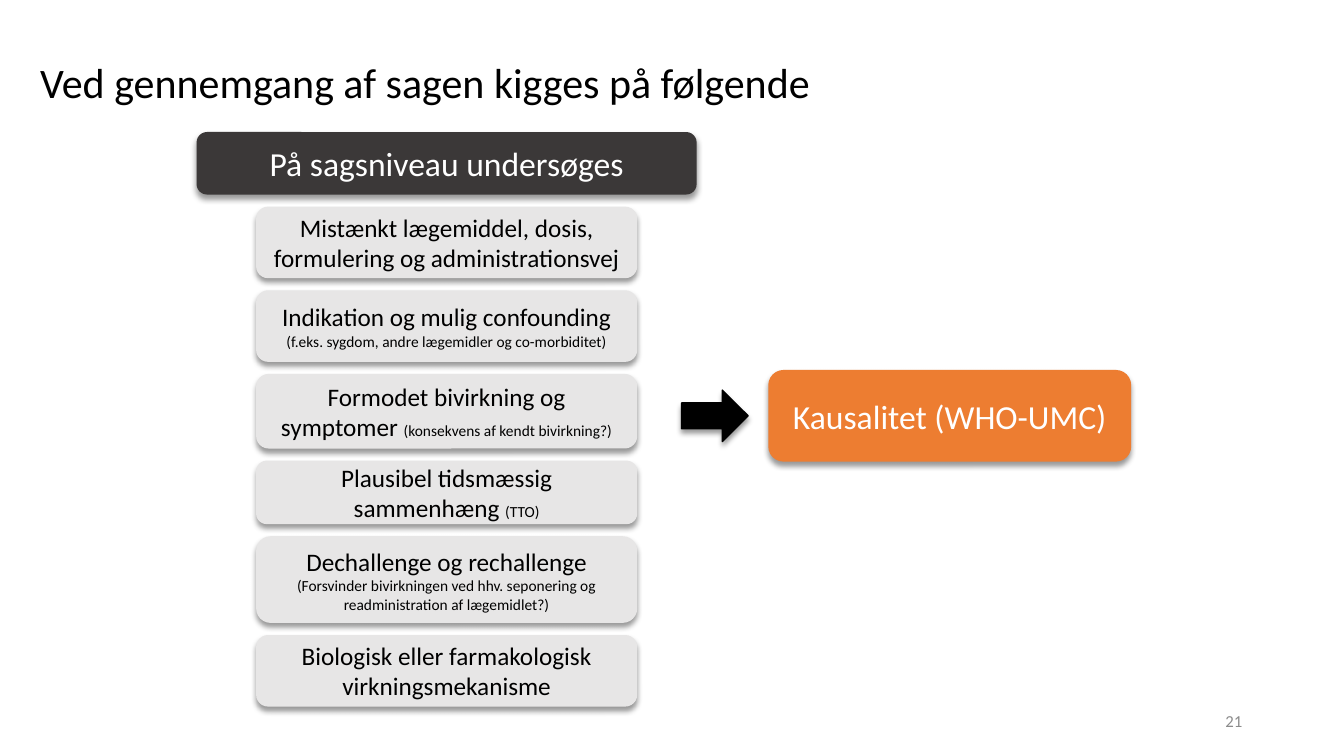
from lxml.etree import SubElement
from pptx import Presentation
from pptx.dml.color import RGBColor
from pptx.enum.shapes import MSO_SHAPE as Shape
from pptx.enum.text import MSO_ANCHOR as Anchor, PP_ALIGN as Align
from pptx.oxml.ns import qn
from pptx.util import Inches, Pt

COLORS = {
    "black": "000000",
    "white": "FFFFFF",
    "heading": "3B3838",
    "step": "E7E6E6",
    "result": "ED7D31",
    "number": "8C8C8C",
}
STEP_LEFT, STEP_TOP, STEP_WIDTH, STEP_GAP = 2.54, 2.05, 3.78, 0.12
MAIN, DETAIL = 18, 11
STEPS = [
    (0.71, [[("Mistænkt lægemiddel, dosis, formulering og administrationsvej", MAIN)]]),
    (0.71, [[("Indikation og mulig confounding ", MAIN),
             ("(f.eks. sygdom, andre lægemidler og co-morbiditet)", DETAIL)]]),
    (0.74, [[("Formodet bivirkning og symptomer ", MAIN),
             ("(konsekvens af kendt bivirkning?)", DETAIL)]]),
    (0.63, [[("Plausibel tidsmæssig sammenhæng ", MAIN), ("(TTO)", DETAIL)]]),
    (0.86, [[("Dechallenge og rechallenge", MAIN)],
            [("(Forsvinder bivirkningen ved hhv. seponering og "
              "readministration af lægemidlet?)", DETAIL)]]),
    (0.71, [[("Biologisk eller farmakologisk virkningsmekanisme", MAIN)]]),
]


def color(name):
    """Return the named colour."""
    return RGBColor.from_string(COLORS[name])


def write(box, paragraphs, fill="black", align=Align.CENTER, spacing=None):
    """Write paragraphs of (text, size) spans into a shape."""
    frame = box.text_frame
    frame.word_wrap = True
    frame.vertical_anchor = Anchor.MIDDLE
    for index, spans in enumerate(paragraphs):
        para = frame.add_paragraph() if index else frame.paragraphs[0]
        para.alignment = align
        para.line_spacing = spacing
        for text, size in spans:
            span = para.add_run()
            span.text = text
            span.font.name = "Calibri"
            span.font.size = Pt(size)
            span.font.color.rgb = color(fill)


def add_label(page, place, text, size, **style):
    """Add a plain text box."""
    box = page.shapes.add_textbox(*map(Inches, place))
    write(box, [[(text, size)]], **style)


def add_block(page, place, fill, kind=Shape.ROUNDED_RECTANGLE):
    """Add a filled shape with a soft shadow below it."""
    box = page.shapes.add_shape(kind, *map(Inches, place))
    box.fill.solid()
    box.fill.fore_color.rgb = color(fill)
    box.line.fill.background()
    box.shadow.inherit = False
    effects = box.element.spPr.find(qn("a:effectLst"))
    shadow = SubElement(effects, qn("a:outerShdw"), blurRad=str(Pt(4)),
                        dist=str(Pt(3)), dir="5400000", rotWithShape="0")
    tint = SubElement(shadow, qn("a:srgbClr"), val=COLORS["black"])
    SubElement(tint, qn("a:alpha"), val="40000")
    return box


def add_steps(page):
    """Stack the review steps with equal gaps."""
    top = STEP_TOP
    for height, paragraphs in STEPS:
        box = add_block(page, (STEP_LEFT, top, STEP_WIDTH, height), "step")
        write(box, paragraphs)
        top += height + STEP_GAP


def main():
    """Build and save the slide."""
    deck = Presentation()
    deck.slide_width, deck.slide_height = Inches(13.33), Inches(7.5)
    page = deck.slides.add_slide(deck.slide_layouts[6])
    add_label(page, (0.3, 0.15, 12.6, 1.38), "Ved gennemgang af sagen kigges på følgende",
              30, align=Align.LEFT, spacing=0.9)
    add_label(page, (9.42, 6.95, 3, 0.4), "21", 12, fill="number", align=Align.RIGHT)
    heading = add_block(page, (1.95, 1.31, 4.96, 0.62), "heading")
    write(heading, [[("På sagsniveau undersøges", 24)]], fill="white")
    add_steps(page)
    arrow = add_block(page, (6.76, 3.87, 0.66, 0.51), "black", Shape.RIGHT_ARROW)
    arrow.line.color.rgb = color("black")
    arrow.line.width = Pt(1)
    result = add_block(page, (7.62, 3.67, 3.6, 0.91), "result")
    write(result, [[("Kausalitet (WHO-UMC)", 24)]], fill="white")
    deck.save("out.pptx")


if __name__ == "__main__":
    main()
